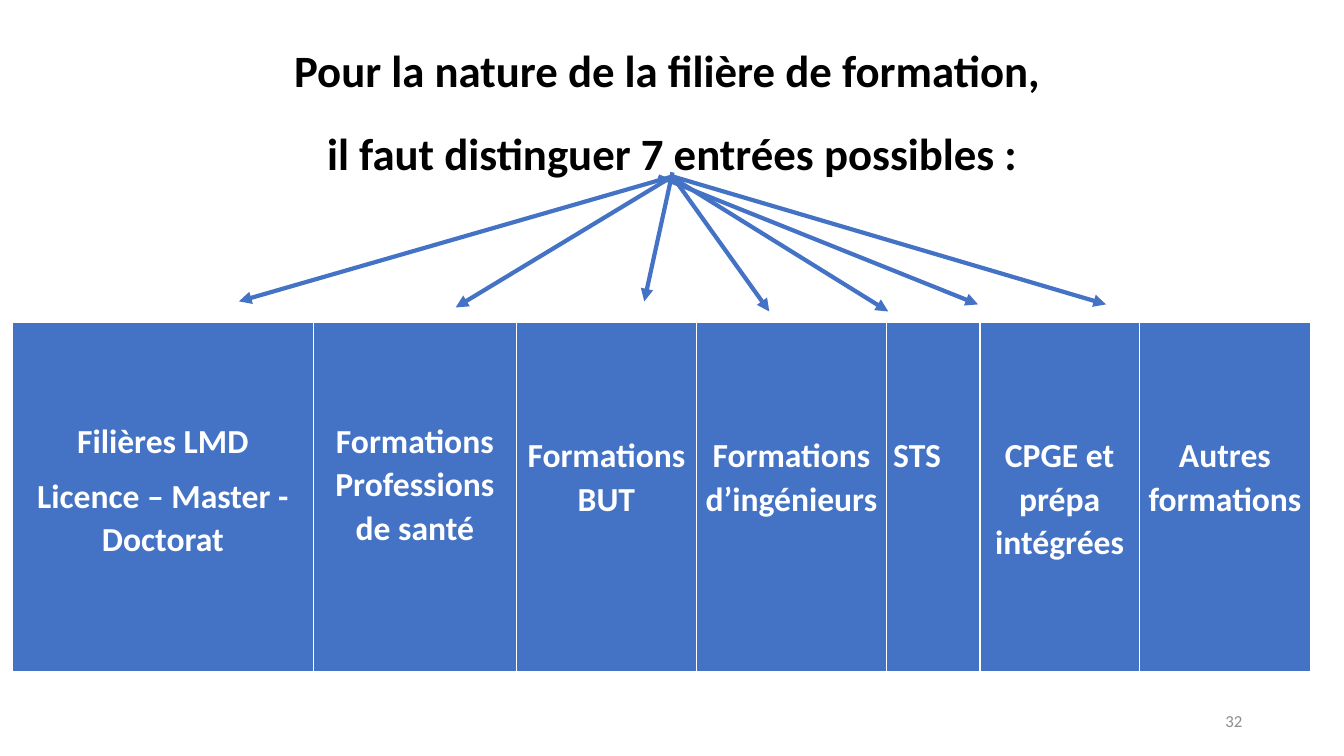
from lxml import etree
from pptx import Presentation
from pptx.dml.color import RGBColor
from pptx.enum import shapes, text
from pptx.oxml import ns
from pptx.util import Inches, Pt

BLUE = RGBColor(0x44, 0x72, 0xC4)
WHITE = RGBColor(0xFF, 0xFF, 0xFF)
BLACK = RGBColor(0, 0, 0)
GREY = RGBColor(0x8C, 0x8C, 0x8C)
CENTER, LEFT, RIGHT = text.PP_ALIGN.CENTER, text.PP_ALIGN.LEFT, text.PP_ALIGN.RIGHT


def format_paragraph(paragraph, size, color, align, bold=True):
    paragraph.alignment = align
    font = paragraph.font
    font.name, font.size, font.bold = "Calibri", Pt(size), bold
    font.color.rgb = color


prs = Presentation()
prs.slide_width, prs.slide_height = Inches(13.33), Inches(7.5)
slide = prs.slides.add_slide(prs.slide_layouts[5])

# Heading
heading = slide.shapes.title
heading.left, heading.top = Inches(0.92), Inches(0.34)
heading.width, heading.height = Inches(11.5), Inches(1.6)
heading_frame = heading.text_frame
heading_frame.auto_size = text.MSO_AUTO_SIZE.NONE
heading_frame.vertical_anchor = text.MSO_ANCHOR.TOP
heading_frame.text = ("Pour la nature de la filière de formation, \n"
                      "il faut distinguer 7 entrées possibles :")
for line in heading_frame.paragraphs:
    format_paragraph(line, 32, BLACK, CENTER)
    line.line_spacing = 1.07
    line.space_before, line.space_after = Pt(10), Pt(8)

# Seven entries: column width, top margin, alignment, wording
entries = [
    (2.99, 0.95, CENTER, "Filières LMD\nLicence – Master - Doctorat"),
    (2.01, 0.95, CENTER, "Formations Professions de santé"),
    (1.79, 1.09, CENTER, "Formations BUT"),
    (1.88, 1.09, CENTER, "Formations d’ingénieurs"),
    (0.93, 1.09, LEFT, "STS"),
    (1.58, 1.09, CENTER, "CPGE et prépa intégrées"),
    (1.70, 1.09, CENTER, "Autres formations"),
]
table = slide.shapes.add_table(1, len(entries), Inches(0.12), Inches(3.2),
                               Inches(12.88), Inches(3.46)).table
for column, (width, top_margin, align, wording) in enumerate(entries):
    table.columns[column].width = Inches(width)
    cell = table.cell(0, column)
    cell.fill.solid()
    cell.fill.fore_color.rgb = BLUE
    cell.margin_left = cell.margin_right = Inches(0.07)
    cell.margin_top, cell.margin_bottom = Inches(top_margin), 0
    cell.text = wording
    for line in cell.text_frame.paragraphs:
        format_paragraph(line, 24, WHITE, align)
        line.line_spacing = 1.07
        line.space_after = Pt(8)

# Slide number
number_frame = slide.shapes.add_textbox(Inches(9.42), Inches(6.95),
                                        Inches(3), Inches(0.4)).text_frame
number_frame.word_wrap = True
number_frame.vertical_anchor = text.MSO_ANCHOR.MIDDLE
number_frame.text = "32"
format_paragraph(number_frame.paragraphs[0], 12, GREY, RIGHT, bold=False)

# Arrows fanning out from the heading to the entries
arrows = [
    (6.67, 1.71, 6.39, 2.99),
    (6.67, 1.75, 2.37, 2.99),
    (6.67, 1.75, 10.97, 3.02),
    (6.67, 1.75, 4.52, 3.05),
    (6.67, 1.75, 7.63, 3.09),
    (6.65, 1.75, 8.81, 3.09),
    (6.53, 1.75, 9.7, 3.02),
]
for ends in arrows:
    arrow = slide.shapes.add_connector(shapes.MSO_CONNECTOR.STRAIGHT, *map(Inches, ends))
    arrow.line.color.rgb = BLUE
    arrow.line.width = Pt(3)
    properties = arrow._element.spPr
    etree.SubElement(properties.find(ns.qn("a:ln")), ns.qn("a:tailEnd"), type="triangle")
    etree.SubElement(properties, ns.qn("a:effectLst"))

prs.save("out.pptx")
